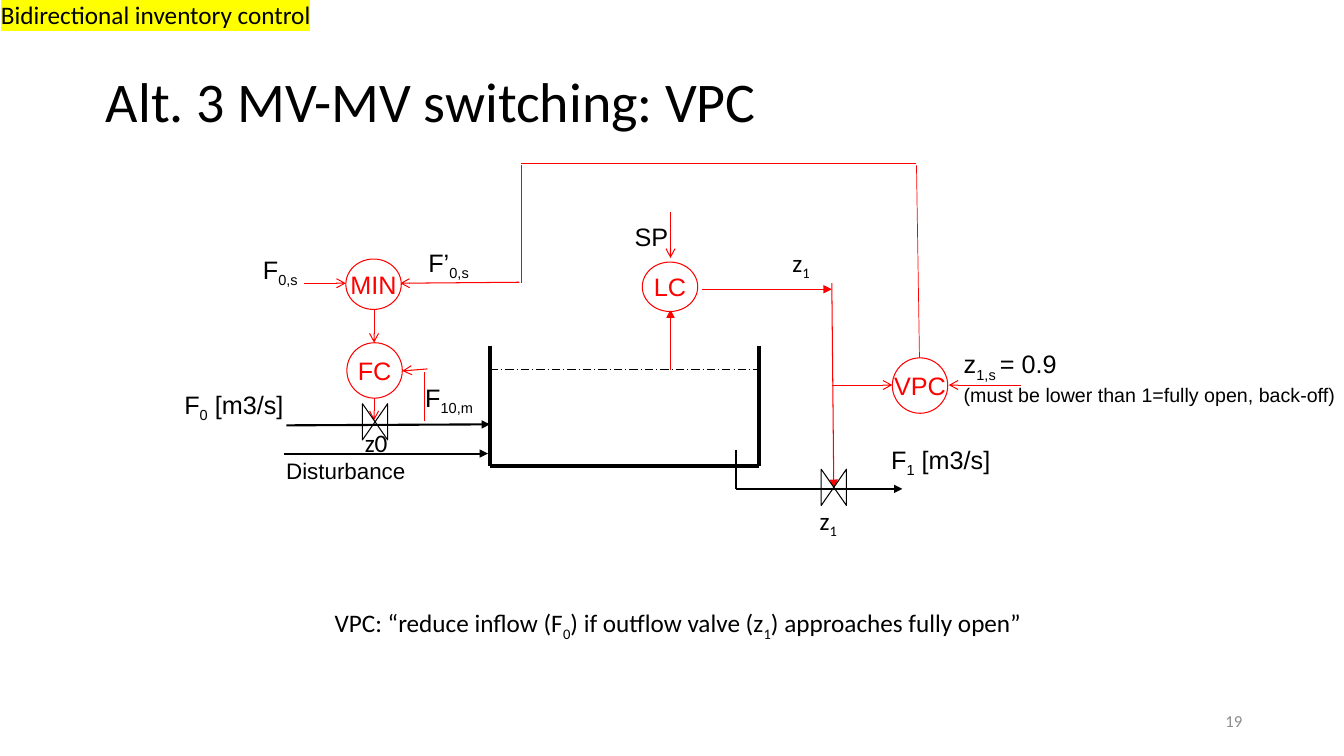
from dataclasses import dataclass

from lxml.etree import SubElement
from pptx import Presentation
from pptx.dml.color import RGBColor
from pptx.enum.dml import MSO_LINE
from pptx.enum.shapes import MSO_CONNECTOR, MSO_SHAPE
from pptx.enum.text import MSO_ANCHOR, PP_ALIGN
from pptx.oxml.ns import qn
from pptx.slide import Slide
from pptx.text.text import Font
from pptx.util import Inches, Pt

BLACK = RGBColor(0x00, 0x00, 0x00)
RED = RGBColor(0xFF, 0x00, 0x00)
WHITE = RGBColor(0xFF, 0xFF, 0xFF)
GREY = RGBColor(0x8C, 0x8C, 0x8C)
HIGHLIGHT = "FFFF00"

TANK_LEFT, TANK_RIGHT, TANK_TOP, TANK_BOTTOM = 4.86, 7.53, 3.43, 4.62
LEVEL = 3.67
OUTLET_X, OUTLET_Y = 7.3, 4.85
FLOW_X = 3.71
LEVEL_X = 6.65
SIGNAL_X = 8.25
VPC_Y = 3.82
MIN_Y = 2.81
LOOP_LEFT, LOOP_RIGHT, LOOP_TOP = 5.17, 9.09, 1.62


@dataclass(frozen=True)
class Line:
    start: tuple[float, float]
    end: tuple[float, float]
    color: RGBColor = RED
    width: float = 0.75
    arrowhead: str = ""
    dashed: bool = False


@dataclass(frozen=True)
class Controller:
    name: str
    left: float
    top: float
    height: float = 0.55


@dataclass(frozen=True)
class Label:
    """Paragraphs in which every second part between bars is a subscript."""
    paragraphs: tuple[str, ...]
    left: float
    top: float
    width: float
    height: float = 0.4
    font: str = "Arial"
    sizes: tuple[float, ...] = (18,)
    color: RGBColor = BLACK
    align: PP_ALIGN = PP_ALIGN.LEFT
    anchor: MSO_ANCHOR = MSO_ANCHOR.TOP
    highlight: str = ""


LINES = [
    # Tank and liquid level
    Line((TANK_LEFT, TANK_TOP), (TANK_LEFT, TANK_BOTTOM), BLACK, 3),
    Line((TANK_LEFT, TANK_BOTTOM), (TANK_RIGHT, TANK_BOTTOM), BLACK, 3),
    Line((TANK_RIGHT, TANK_TOP), (TANK_RIGHT, TANK_BOTTOM), BLACK, 3),
    Line((TANK_LEFT, LEVEL), (TANK_RIGHT, LEVEL), BLACK, dashed=True),
    # Pipes
    Line((2.82, 4.5), (4.84, 4.5), BLACK, 1.5, "triangle"),
    Line((2.84, 4.22), (TANK_LEFT, 4.21), BLACK, 1.5, "triangle"),
    Line((OUTLET_X, 4.46), (OUTLET_X, OUTLET_Y), BLACK, 1.5),
    Line((OUTLET_X, OUTLET_Y), (8.95, OUTLET_Y), BLACK, 1.5, "triangle"),
    # Level control
    Line((LEVEL_X, LEVEL), (LEVEL_X, 3.07), width=1, arrowhead="triangle"),
    Line((LEVEL_X, 2.1), (LEVEL_X, 2.56), arrowhead="arrow"),
    Line((6.96, 2.87), (SIGNAL_X, 2.87), arrowhead="triangle"),
    Line((SIGNAL_X, 2.81), (8.27, 4.84), arrowhead="triangle"),
    # Flow control
    Line((4.21, 4.18), (4.21, 3.69)),
    Line((4.24, 3.66), (3.99, 3.68), arrowhead="arrow"),
    Line((FLOW_X, 3.95), (FLOW_X, 4.17), arrowhead="arrow"),
    Line((FLOW_X, 2.94), (FLOW_X, 3.4), arrowhead="arrow"),
    Line((3.02, MIN_Y), (3.43, MIN_Y), arrowhead="arrow"),
    # Valve position control
    Line((SIGNAL_X, VPC_Y), (8.85, VPC_Y), arrowhead="arrow"),
    Line((10.13, VPC_Y), (9.41, VPC_Y), arrowhead="arrow"),
    Line((9.12, 3.56), (LOOP_RIGHT, 1.64), width=0.5),
    Line((LOOP_RIGHT, LOOP_TOP), (LOOP_LEFT, LOOP_TOP), width=0.5),
    Line((LOOP_LEFT, MIN_Y), (LOOP_LEFT, 1.64), width=0.5),
    Line((5.15, 2.8), (3.97, MIN_Y), arrowhead="arrow"),
]

VALVES = [(3.54, 4.06), (8.09, 4.71)]

CONTROLLERS = [
    Controller("LC", 6.37, 2.6, 0.49),
    Controller("FC", 3.44, 3.4),
    Controller("MIN", 3.43, 2.57, 0.5),
    Controller("VPC", 8.85, 3.55),
]

LABELS = [
    Label(("Disturbance",), 2.74, 4.49, 1.4, 0.37, sizes=(16,)),
    Label(("F|1| [m3/s]",), 8.74, 4.36, 1.21),
    Label(("F|0| [m3/s]",), 1.73, 3.81, 1.21),
    Label(("SP",), 6.19, 2.15, 0.54, align=PP_ALIGN.CENTER),
    Label(("F|10,m",), 4.09, 3.74, 0.73, align=PP_ALIGN.CENTER),
    Label(("F|0,s",), 2.49, 2.47, 0.58, align=PP_ALIGN.CENTER),
    Label(("F’|0,s",), 4.13, 2.4, 0.64, align=PP_ALIGN.CENTER),
    Label(("z|1",), 8.03, 4.96, 0.39, font="Calibri"),
    Label(("z|1",), 7.76, 2.4, 0.39, font="Calibri"),
    Label(("z0",), 3.52, 4.19, 0.43, font="Calibri"),
    Label(("z|1,s |= 0.9", "(must be lower than 1=fully open, back-off)"),
          9.46, 3.41, 4.02, 0.64, sizes=(18, 14)),
    Label(("VPC: “reduce inflow (F|0|) if outflow valve (z|1|) approaches fully open”",),
          3.22, 5.98, 7.18, font="Calibri"),
    Label(("19",), 9.42, 6.95, 3, font="Calibri", sizes=(12,), color=GREY,
          align=PP_ALIGN.RIGHT, anchor=MSO_ANCHOR.MIDDLE),
    Label(("Bidirectional inventory control",), -0.09, -0.06, 3.31,
          font="Calibri", highlight=HIGHLIGHT),
]


def set_font(font: Font, name: str, size: float, color: RGBColor) -> None:
    font.name = name
    font.size = Pt(size)
    font.color.rgb = color


def add_title(page: Slide, text: str) -> None:
    title = page.shapes.title
    title.left, title.top = Inches(0.95), Inches(0.41)
    title.width, title.height = Inches(10.48), Inches(1.25)
    title.text_frame.text = text
    title.text_frame.vertical_anchor = MSO_ANCHOR.MIDDLE
    para = title.text_frame.paragraphs[0]
    para.alignment = PP_ALIGN.LEFT
    para.line_spacing = 0.9
    set_font(para.font, "Calibri", 40, BLACK)


def add_line(page: Slide, line: Line) -> None:
    connector = page.shapes.add_connector(
        MSO_CONNECTOR.STRAIGHT, *(Inches(value) for value in line.start + line.end))
    connector.line.color.rgb = line.color
    connector.line.width = Pt(line.width)
    if line.dashed:
        connector.line.dash_style = MSO_LINE.LONG_DASH_DOT
    if line.arrowhead:
        SubElement(connector.get_or_add_ln(), qn("a:tailEnd"), type=line.arrowhead)
    SubElement(connector.element.spPr, qn("a:effectLst"))


def add_valve(page: Slide, left: float, top: float) -> None:
    valve = page.shapes.add_shape(MSO_SHAPE.FLOWCHART_COLLATE, Inches(left), Inches(top),
                                  Inches(0.36), Inches(0.25))
    valve.rotation = 90
    valve.shadow.inherit = False
    valve.fill.background()
    valve.line.color.rgb = BLACK
    valve.line.width = Pt(0.75)


def add_controller(page: Slide, controller: Controller) -> None:
    circle = page.shapes.add_shape(MSO_SHAPE.OVAL, Inches(controller.left), Inches(controller.top),
                                   Inches(0.55), Inches(controller.height))
    circle.shadow.inherit = False
    circle.fill.solid()
    circle.fill.fore_color.rgb = WHITE
    circle.line.color.rgb = RED
    circle.line.width = Pt(0.75)
    frame = circle.text_frame
    frame.text = controller.name
    frame.word_wrap = False
    frame.vertical_anchor = MSO_ANCHOR.MIDDLE
    frame.paragraphs[0].alignment = PP_ALIGN.CENTER
    set_font(frame.paragraphs[0].font, "Arial", 18, RED)


def add_label(page: Slide, label: Label) -> None:
    box = page.shapes.add_textbox(Inches(label.left), Inches(label.top),
                                  Inches(label.width), Inches(label.height))
    frame = box.text_frame
    frame.word_wrap = label.align == PP_ALIGN.RIGHT
    frame.vertical_anchor = label.anchor
    for index, (text, size) in enumerate(zip(label.paragraphs, label.sizes)):
        para = frame.add_paragraph() if index else frame.paragraphs[0]
        para.alignment = label.align
        set_font(para.font, label.font, size, label.color)
        for part_index, part in enumerate(text.split("|")):
            span = para.add_run()
            span.text = part
            properties = span.font._element
            if part_index % 2:
                properties.set("baseline", "-25000")
            if label.highlight:
                marker = SubElement(properties, qn("a:highlight"))
                SubElement(marker, qn("a:srgbClr"), val=label.highlight)


def main() -> None:
    deck = Presentation()
    deck.slide_width, deck.slide_height = Inches(13.33), Inches(7.5)
    page = deck.slides.add_slide(deck.slide_layouts.get_by_name("Title Only"))
    add_title(page, "Alt. 3 MV-MV switching: VPC")
    for line in LINES:
        add_line(page, line)
    for left, top in VALVES:
        add_valve(page, left, top)
    for controller in CONTROLLERS:
        add_controller(page, controller)
    for label in LABELS:
        add_label(page, label)
    deck.save("out.pptx")


if __name__ == "__main__":
    main()
